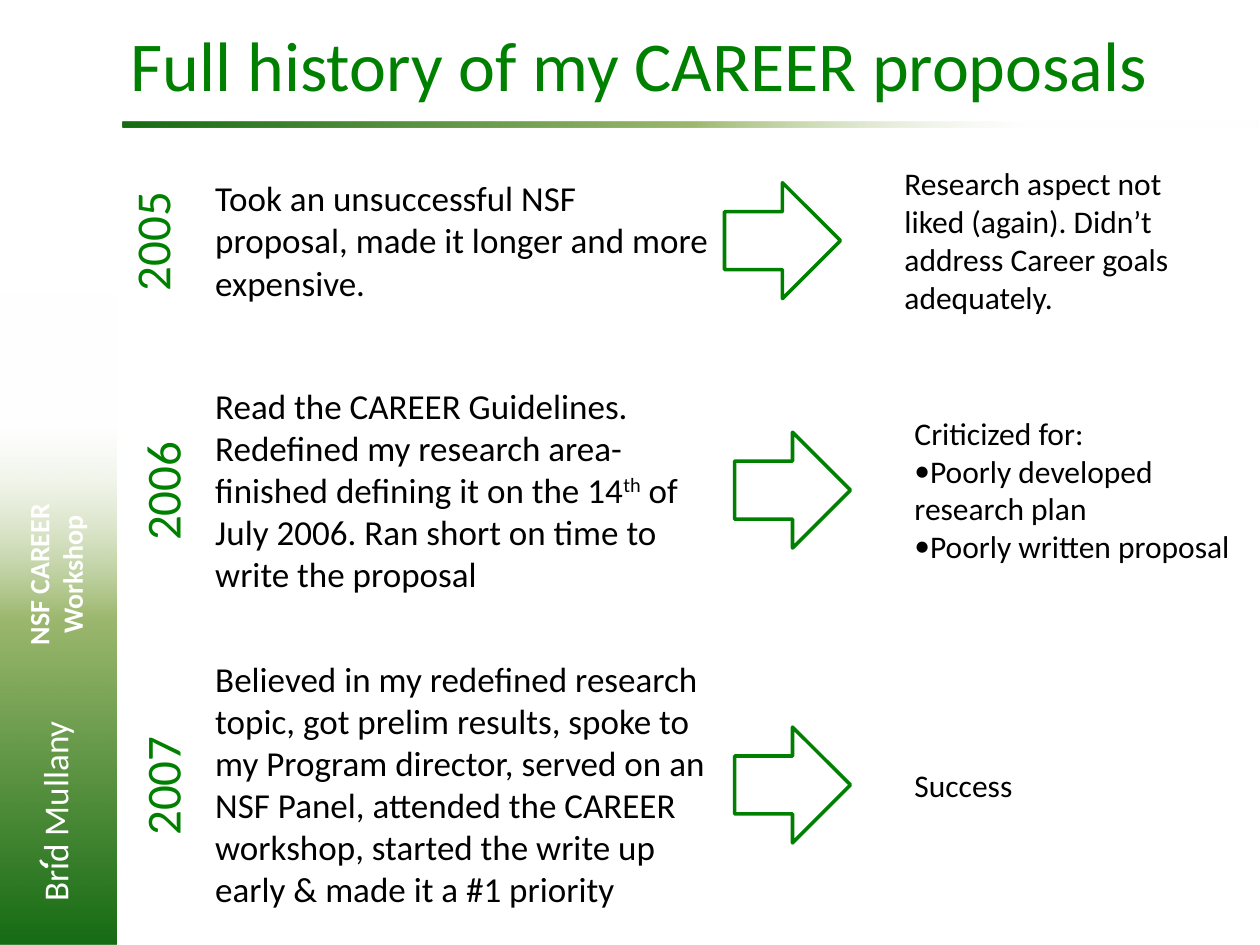
import pptx
import pptx.dml.color
import pptx.enum.shapes
import pptx.enum.text
import pptx.oxml
import pptx.oxml.ns
import pptx.util
from pptx.util import Inches

RGB = pptx.dml.color.RGBColor
SHAPE = pptx.enum.shapes.MSO_SHAPE
FIT = pptx.enum.text.MSO_AUTO_SIZE
ALIGN = pptx.enum.text.PP_ALIGN

GREEN = RGB(0x00, 0x80, 0x00)
BLACK = RGB(0x00, 0x00, 0x00)
WHITE = RGB(0xFF, 0xFF, 0xFF)
LEAF = RGB(0x9C, 0xB8, 0x6E)
DARK = RGB(0x15, 0x6B, 0x13)
FADE = ((20, WHITE, 29), (50, LEAF, 100), (100, DARK, 100))  # place, colour, alpha

# centre, shift to the right, year, story (every second part is raised), result, width
ROWS = (
    (1.91, 0, "2005",
     ["Took an unsuccessful NSF proposal, made it longer and more expensive."],
     ["Research aspect not liked (again). Didn’t address Career goals adequately."], 2.58),
    (3.89, 0.08, "2006",
     ["Read the CAREER Guidelines. Redefined my research area- finished defining it on the 14",
      "th", " of July 2006. Ran short on time to write the proposal"],
     ["Criticized for:", "•Poorly developed research plan", "•Poorly written proposal"], 2.83),
    (6.23, 0.08, "2007",
     ["Believed in my redefined research topic, got prelim results, spoke to my Program "
      "director, served on an NSF Panel, attended the CAREER workshop, started the write up "
      "early & made it a #1 priority"],
     ["Success"], 2.83),
)
HIGH = {"2005": (1.11, 1.31), "2006": (1.78, 1.31), "2007": (2.12, 0.4)}  # story, result


def add_bullet(para):
    props = para._p.get_or_add_pPr()
    props.set("marL", "0")
    props.set("indent", "0")
    names = pptx.oxml.ns.nsdecls("a")
    for tag in ('buFont {} typeface="Calibri"', 'buChar {} char="•"'):
        props.append(pptx.oxml.parse_xml(f"<a:{tag.format(names)}/>"))


def add_text(slide, box, paras, size, color, bold=False, turn=0, wrap=True, align=ALIGN.LEFT):
    """Each paragraph is a string, or a list whose every second part is raised."""
    shape = slide.shapes.add_textbox(*map(Inches, box))
    shape.rotation = turn
    frame = shape.text_frame
    frame.word_wrap = wrap
    frame.auto_size = FIT.SHAPE_TO_FIT_TEXT
    for i, parts in enumerate(paras):
        para = frame.add_paragraph() if i else frame.paragraphs[0]
        if isinstance(parts, str):
            parts = [parts]
        if parts[0].startswith("•"):
            add_bullet(para)
            parts = [parts[0][1:]]
        for j, part in enumerate(parts):
            run = para.add_run()
            run.text = part
            if j % 2:
                run.font._element.set("baseline", "30000")
        para.alignment = align
        para.font.name = "Calibri"
        para.font.size = pptx.util.Pt(size)
        para.font.bold = bold
        para.font.color.rgb = color
    return frame


def add_fade(slide, box, turn=0, round_by=None):
    """Bar that fades from white at its top to dark green at its bottom."""
    bar = slide.shapes.add_shape(SHAPE.ROUNDED_RECTANGLE, *map(Inches, box))
    bar.rotation = turn
    bar.shadow.inherit = False
    bar.line.fill.background()
    if round_by is not None:
        bar.adjustments[0] = round_by
    stops = "".join(
        f'<a:gs pos="{place * 1000}"><a:srgbClr val="{color}">'
        f'<a:alpha val="{alpha * 1000}"/></a:srgbClr></a:gs>'
        for place, color, alpha in FADE)
    grad = pptx.oxml.parse_xml(
        f'<a:gradFill {pptx.oxml.ns.nsdecls("a")} rotWithShape="1">'
        f'<a:gsLst>{stops}</a:gsLst><a:lin ang="5400000" scaled="0"/></a:gradFill>')
    bar._element.spPr.find(pptx.oxml.ns.qn("a:prstGeom")).addnext(grad)


def add_arrow(slide, left, mid, side=0.92):
    arrow = slide.shapes.add_shape(
        SHAPE.RIGHT_ARROW, *map(Inches, (left, mid - side / 2, side, side)))
    arrow.shadow.inherit = False
    arrow.fill.background()
    arrow.line.color.rgb = GREEN
    arrow.line.width = pptx.util.Pt(2)


def add_row(slide, mid, shift, year, story, result, wide):
    tall, short = HIGH[year]
    add_text(slide, (1.61, mid - tall / 2, 4.12, tall), [story], 20, BLACK)
    add_text(slide, (0.7 + shift, mid - 0.285, 1, 0.57), [year], 28, GREEN,
             turn=270, wrap=False)
    add_arrow(slide, 5.75 + shift, mid)
    add_text(slide, (7.08 + shift, mid - short / 2, wide, short), result, 18, BLACK)


def add_side(slide):
    add_fade(slide, (0, 2.33, 0.92, 5.17), round_by=0)
    add_text(slide, (-0.41, 6.19, 1.69, 0.44), ["Brid Mullany"], 20, WHITE,
             turn=270, wrap=False)
    add_text(slide, (-0.23, 4.24, 1.34, 0.64), ["NSF CAREER", "Workshop"], 16, WHITE,
             bold=True, turn=270, wrap=False, align=ALIGN.CENTER)
    add_text(slide, (0.26, 6.67, 0.27, 0.44), ["‘"], 20, WHITE,
             bold=True, turn=299.7, wrap=False)


def main():
    deck = pptx.Presentation()
    deck.slide_width, deck.slide_height = Inches(10), Inches(7.5)
    slide = deck.slides.add_slide(deck.slide_layouts[6])
    add_side(slide)
    add_fade(slide, (5.45, -3.51, 0.05, 9), turn=90)
    title = add_text(slide, (0.94, 0.12, 9, 0.87),
                     ["Full history of my CAREER proposals"], 40, GREEN)
    title.auto_size = FIT.NONE
    for row in ROWS:
        add_row(slide, *row)
    deck.save("out.pptx")


if __name__ == "__main__":
    main()
